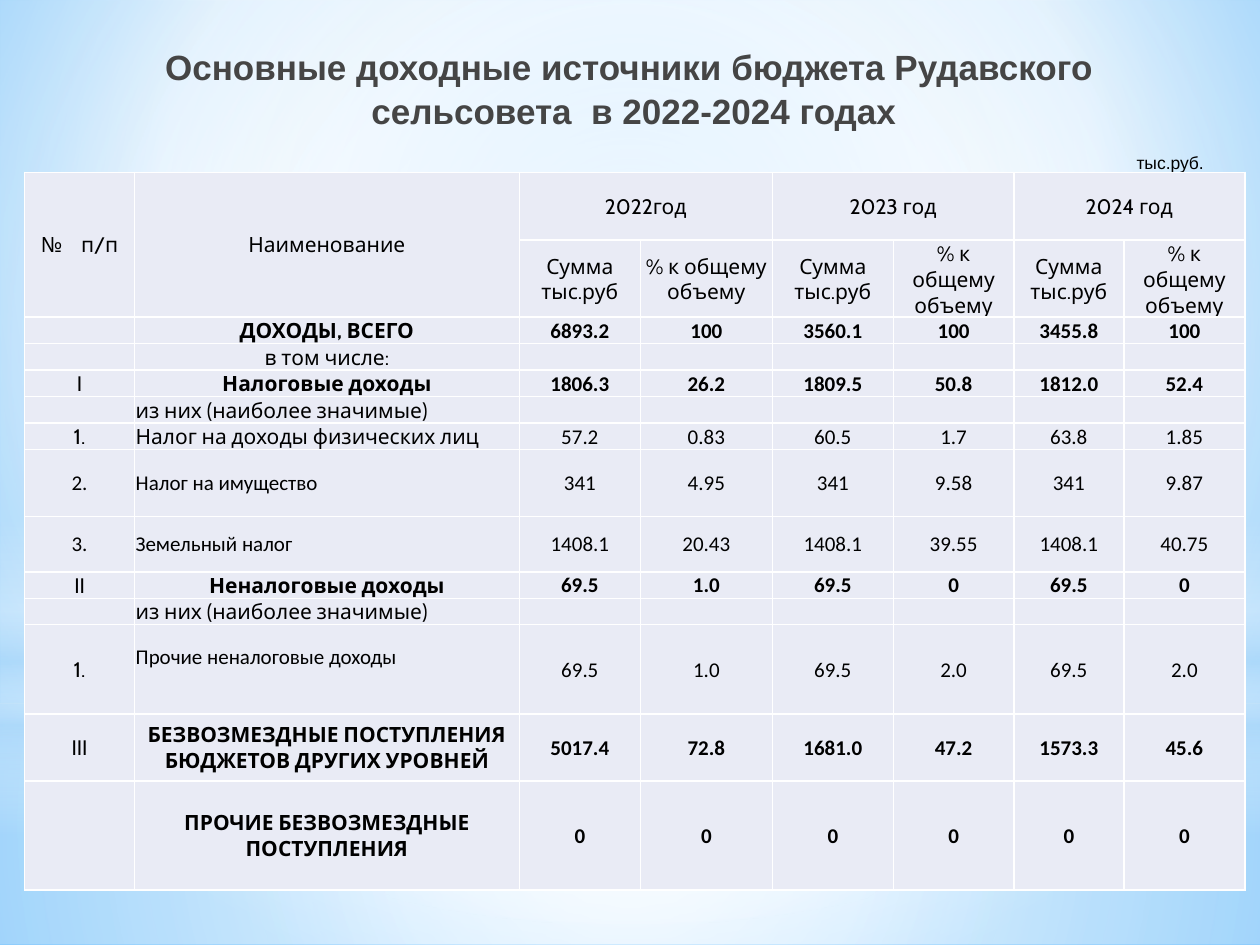
import pptx
import pptx.util
import pptx.dml.color
import pptx.enum.shapes
import pptx.enum.text
import pptx.oxml.ns
from lxml import etree

Pt = pptx.util.Pt
RGBColor = pptx.dml.color.RGBColor
Align = pptx.enum.text.PP_ALIGN
Anchor = pptx.enum.text.MSO_ANCHOR
Kind = pptx.enum.shapes.MSO_SHAPE
qn = pptx.oxml.ns.qn

TITLE_GREY = RGBColor(0x45, 0x45, 0x45)
BLACK = RGBColor(0, 0, 0)
WHITE = RGBColor(0xFF, 0xFF, 0xFF)
CELL_FILL = RGBColor(0xE9, 0xEB, 0xF5)
SKY = RGBColor(0xB4, 0xDC, 0xFA)
BACK_EDGE = RGBColor(0x5B, 0xB9, 0xFF)
BACK_CENTRE = RGBColor(0x9E, 0xD5, 0xFF)


def set_gradient(owner, stops, focus=None):
    """Refill owner's gradient: stops are (position, colour, opacity) in percent."""
    gradient = owner.find(qn("a:gradFill"))
    for child in list(gradient):
        gradient.remove(child)
    stop_list = etree.SubElement(gradient, qn("a:gsLst"))
    for position, colour, opacity in stops:
        stop = etree.SubElement(stop_list, qn("a:gs"), pos=str(position * 1000))
        tint = etree.SubElement(stop, qn("a:srgbClr"), val=str(colour))
        if opacity < 100:
            etree.SubElement(tint, qn("a:alpha"), val=str(opacity * 1000))
    if focus:
        circle = etree.SubElement(gradient, qn("a:path"), path="circle")
        edges = {side: str(part * 1000) for side, part in zip("ltrb", focus)}
        etree.SubElement(circle, qn("a:fillToRect"), edges)
    else:
        etree.SubElement(gradient, qn("a:lin"), ang="5400000", scaled="0")


def style_text(para, size, font, colour, bold, align):
    para.alignment = align
    for span in para.runs:
        span.font.size = Pt(size)
        span.font.name = font
        span.font.bold = bold
        span.font.color.rgb = colour


deck = pptx.Presentation()
deck.slide_width, deck.slide_height = Pt(720), Pt(540)
page = deck.slides.add_slide(deck.slide_layouts[5])

# Background
page.background.fill.gradient()
set_gradient(page._element.find(".//" + qn("p:bgPr")),
             [(0, BACK_CENTRE, 100), (60, WHITE, 100), (100, BACK_EDGE, 100)],
             (20, 10, 20, 60))

# Translucent glow layers
centre = (50, 50, 50, 50)
glows = [
    (Kind.RECTANGLE, 402, 138, centre, [(0, WHITE, 91), (37, WHITE, 76), (100, SKY, 79)]),
    (Kind.RECTANGLE, 0, 402, centre, [(0, WHITE, 89), (48, WHITE, 62), (100, SKY, 79)]),
    (Kind.RECTANGLE, 297, 180, None, [(0, WHITE, 0), (29, WHITE, 30), (45, SKY, 40),
                                      (55, WHITE, 26), (65, SKY, 60), (100, WHITE, 0)]),
    (Kind.OVAL, 126, 402, centre, [(0, WHITE, 100), (56, WHITE, 0)]),
]
for kind, top, height, focus, stops in glows:
    glow = page.shapes.add_shape(kind, 0, Pt(top), Pt(720), Pt(height))
    glow.shadow.inherit = False
    glow.line.fill.background()
    glow.fill.gradient()
    set_gradient(glow._element.spPr, stops, focus)

# Title, raised above the glow layers
title = page.shapes.title
page.shapes._spTree.append(title._element)
title.left, title.top, title.width, title.height = Pt(87), Pt(20), Pt(545), Pt(90)
frame = title.text_frame
frame.text = "Основные доходные источники бюджета Рудавского  сельсовета  в 2022-2024 годах"
frame.word_wrap = True
frame.auto_size = pptx.enum.text.MSO_AUTO_SIZE.NONE
frame.vertical_anchor = Anchor.TOP
frame.margin_left = frame.margin_right = Pt(5)
frame.margin_top = Pt(5)
frame.paragraphs[0].line_spacing = 1.04
style_text(frame.paragraphs[0], 20, "Arial", TITLE_GREY, True, Align.CENTER)

# Unit label
unit = page.shapes.add_textbox(Pt(570), Pt(83), Pt(125), Pt(19.4))
unit.text_frame.word_wrap = True
unit.text_frame.text = "тыс.руб."
unit.text_frame.vertical_anchor = Anchor.MIDDLE
style_text(unit.text_frame.paragraphs[0], 10, "Arial", BLACK, False, Align.RIGHT)

# Table contents: number, name, six values
sum_head, share_head = "Сумма тыс.руб", "% к общему объему"
rows = [
    ["№    п/п", "Наименование", "2022год", "", "2023 год", "", "2024 год", ""],
    ["", ""] + [sum_head, share_head] * 3,
    ["", "ДОХОДЫ, ВСЕГО", "6893.2", "100", "3560.1", "100", "3455.8", "100"],
    ["", "в том числе:"] + [""] * 6,
    ["I", "Налоговые доходы", "1806.3", "26.2", "1809.5", "50.8", "1812.0", "52.4"],
    ["", "из них (наиболее значимые)"] + [""] * 6,
    ["1.", "Налог на доходы физических лиц", "57.2", "0.83", "60.5", "1.7", "63.8", "1.85"],
    ["2.", "Налог на имущество", "341", "4.95", "341", "9.58", "341", "9.87"],
    ["3.", "Земельный налог", "1408.1", "20.43", "1408.1", "39.55", "1408.1", "40.75"],
    ["II", "Неналоговые доходы", "69.5", "1.0", "69.5", "0", "69.5", "0"],
    ["", "из них (наиболее значимые)"] + [""] * 6,
    ["1.", "Прочие неналоговые доходы", "69.5", "1.0", "69.5", "2.0", "69.5", "2.0"],
    ["III", "БЕЗВОЗМЕЗДНЫЕ ПОСТУПЛЕНИЯ БЮДЖЕТОВ ДРУГИХ УРОВНЕЙ",
     "5017.4", "72.8", "1681.0", "47.2", "1573.3", "45.6"],
    ["", "ПРОЧИЕ БЕЗВОЗМЕЗДНЫЕ ПОСТУПЛЕНИЯ"] + ["0"] * 6,
]
bold_rows = {2, 4, 9, 12, 13}
left_rows = {5, 6, 7, 8, 10, 11}
calibri_labels = {(7, 0), (7, 1), (8, 0), (8, 1), (11, 1)}
column_widths = [62.8, 219.9, 69.2, 75.4, 69.2, 68.8, 62.9, 69.2]
line_height = 14.9
row_heights = ([38.8, 44] + [line_height] * 5 + [38.2, 31.8] + [line_height] * 2
               + [51, 38.2, 62.5])

# Table grid
grid = page.shapes.add_table(len(rows), len(column_widths), Pt(14.1), Pt(98.5),
                             Pt(sum(column_widths)), Pt(sum(row_heights)))
table = grid.table
for column, width in zip(table.columns, column_widths):
    column.width = Pt(width)
for line, height in zip(table.rows, row_heights):
    line.height = Pt(height)

# Cells
for r, row in enumerate(rows):
    for c, text in enumerate(row):
        cell = table.cell(r, c)
        cell.fill.solid()
        cell.fill.fore_color.rgb = CELL_FILL
        cell.vertical_anchor = Anchor.MIDDLE
        cell.margin_left = cell.margin_right = cell.margin_top = Pt(0.7)
        cell.margin_bottom = Pt(0)
        para = cell.text_frame.paragraphs[0]
        if text:
            para.text = text
            is_label = r < 2 or c < 2
            font = "Cabin" if is_label and (r, c) not in calibri_labels else "Calibri"
            align = Align.LEFT if c == 1 and r in left_rows else Align.CENTER
            style_text(para, 12, font, BLACK, c > 0 and r in bold_rows, align)
        else:
            etree.SubElement(para._p, qn("a:endParaRPr"), sz="1200")
        properties = cell._tc.get_or_add_tcPr()
        for place, side in enumerate(("a:lnL", "a:lnR", "a:lnT", "a:lnB")):
            border = etree.Element(qn(side), w=str(Pt(1)))
            paint = etree.SubElement(border, qn("a:solidFill"))
            etree.SubElement(paint, qn("a:srgbClr"), val=str(WHITE))
            properties.insert(place, border)

# The name of other non-tax income sits one line higher
table.cell(11, 1).margin_bottom = Pt(14)

# Merged headings
for c in (0, 1):
    table.cell(0, c).merge(table.cell(1, c))
for c in (2, 4, 6):
    table.cell(0, c).merge(table.cell(0, c + 1))

deck.save("out.pptx")
